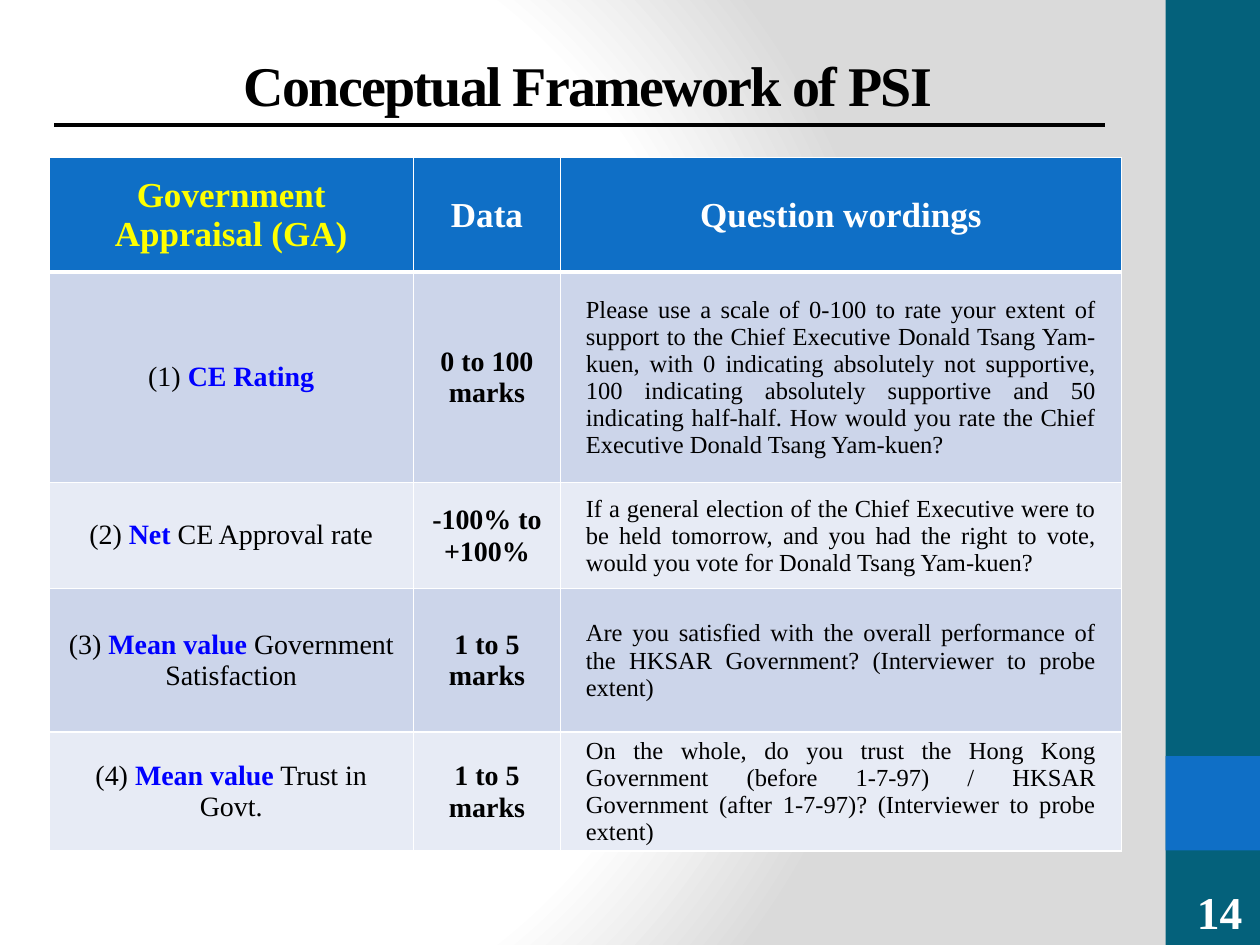
import pptx
import pptx.dml.color
import pptx.enum.shapes
import pptx.enum.text
import pptx.oxml
import pptx.oxml.ns
import pptx.util

Inches, Pt = pptx.util.Inches, pptx.util.Pt
RGBColor = pptx.dml.color.RGBColor
ALIGN, ANCHOR = pptx.enum.text.PP_ALIGN, pptx.enum.text.MSO_ANCHOR
SHAPE = pptx.enum.shapes.MSO_SHAPE
qn = pptx.oxml.ns.qn
NS = pptx.oxml.ns.nsdecls("a")

FONT = "Times New Roman"
BLACK = RGBColor(0, 0, 0)
WHITE = RGBColor(0xFF, 0xFF, 0xFF)
GREY = RGBColor(0xDA, 0xDA, 0xDA)
TEAL = RGBColor(0x04, 0x61, 0x7B)
BLUE = RGBColor(0x0F, 0x6F, 0xC6)
YELLOW = RGBColor(0xFF, 0xFF, 0)
KEY_BLUE = RGBColor(0, 0, 0xFF)
BANDS = [RGBColor(0xCC, 0xD5, 0xEA), RGBColor(0xE7, 0xEB, 0xF5)]

TITLE = "Conceptual Framework of PSI"
PAGE = "14"
HEADERS = [("Government Appraisal (GA)", YELLOW), ("Data", WHITE), ("Question wordings", WHITE)]
# number, key words, rest of the name, data lines, question
ROWS = [
    ("(1) ", "CE Rating", "", ["0 to 100", "marks"],
     "Please use a scale of 0-100 to rate your extent of support to the Chief Executive "
     "Donald Tsang Yam-kuen, with 0 indicating absolutely not supportive, 100 indicating "
     "absolutely supportive and 50 indicating half-half. How would you rate the Chief "
     "Executive Donald Tsang Yam-kuen?"),
    ("(2) ", "Net", " CE Approval rate", ["-100% to", "+100%"],
     "If a general election of the Chief Executive were to be held tomorrow, and you had "
     "the right to vote, would you vote for Donald Tsang Yam-kuen?"),
    ("(3) ", "Mean value", " Government\nSatisfaction", ["1 to 5 marks"],
     "Are you satisfied with the overall performance of the HKSAR Government? "
     "(Interviewer to probe extent)"),
    ("(4) ", "Mean value", " Trust in Govt.", ["1 to 5 marks"],
     "On the whole, do you trust the Hong Kong Government (before 1-7-97) / HKSAR "
     "Government (after 1-7-97)? (Interviewer to probe extent)"),
]
COL_WIDTHS = [2.89, 1.17, 4.45]
ROW_HEIGHTS = [0.91, 1.67, 0.84, 1.14, 0.93]
COL_INSETS = [(0.1, 0.05, 0.1, 0.05), (0.01, 0.01, 0.01, 0), (0.01, 0.01, 0.2, 0)]
HEADER_INSETS = [COL_INSETS[0], COL_INSETS[1], COL_INSETS[1]]


def write(p, runs, size, align=ALIGN.CENTER):
    """Fill a paragraph with (text, colour, bold) runs; a newline is a line break."""
    p.alignment = align
    p.font.name, p.font.size = FONT, Pt(size)
    for text, color, bold in runs:
        for i, line in enumerate(text.split("\n")):
            if i:
                p.add_line_break()
            if line:
                r = p.add_run()
                r.text = line
                r.font.name, r.font.size = FONT, Pt(size)
                r.font.bold, r.font.color.rgb = bold, color


def indent(p, left):
    pPr = p._p.get_or_add_pPr()
    pPr.set("marL", str(Inches(left)))
    pPr.set("indent", "0")


def format_cell(cell, fill, insets, bottom=1):
    cell.fill.solid()
    cell.fill.fore_color.rgb = fill
    cell.vertical_anchor = ANCHOR.MIDDLE
    (cell.margin_left, cell.margin_top,
     cell.margin_right, cell.margin_bottom) = map(Inches, insets)
    tcPr = cell._tc.get_or_add_tcPr()
    for i, (side, width) in enumerate(zip("LRTB", (1, 1, 1, bottom))):
        tcPr.insert(i, pptx.oxml.parse_xml(
            f'<a:ln{side} {NS} w="{Pt(width)}"><a:solidFill>'
            f'<a:srgbClr val="{WHITE}"/></a:solidFill></a:ln{side}>'))


def add_background(slide):
    slide.background.fill.gradient()
    old = next(slide.element.iter(qn("a:gradFill")))
    stops = "".join(f'<a:gs pos="{pos * 1000}"><a:srgbClr val="{color}"/></a:gs>'
                    for pos, color in ((0, WHITE), (75, WHITE), (100, GREY)))
    old.getparent().replace(old, pptx.oxml.parse_xml(
        f'<a:gradFill {NS} rotWithShape="1"><a:gsLst>{stops}</a:gsLst><a:path path="circle">'
        '<a:fillToRect l="20000" t="50000" r="100000" b="50000"/></a:path></a:gradFill>'))


def add_block(slide, top, height, color):
    sp = slide.shapes.add_shape(SHAPE.RECTANGLE, Inches(9.25), Inches(top),
                                Inches(0.75), Inches(height))
    sp.shadow.inherit = False
    sp.fill.solid()
    sp.fill.fore_color.rgb = color
    sp.line.fill.background()


def add_text(slide, box, text, size, color):
    sp = slide.shapes.add_textbox(*map(Inches, box))
    write(sp.text_frame.paragraphs[0], [(text, color, True)], size)
    return sp.text_frame


def add_table(slide):
    table = slide.shapes.add_table(len(ROW_HEIGHTS), len(COL_WIDTHS), Inches(0.39), Inches(1.25),
                                   Inches(sum(COL_WIDTHS)), Inches(sum(ROW_HEIGHTS))).table
    table.horz_banding = False
    for col, width in zip(table.columns, COL_WIDTHS):
        col.width = Inches(width)
    for row, height in zip(table.rows, ROW_HEIGHTS):
        row.height = Inches(height)

    for c, (text, color) in enumerate(HEADERS):
        cell = table.cell(0, c)
        format_cell(cell, BLUE, HEADER_INSETS[c], bottom=3)
        write(cell.text_frame.paragraphs[0], [(text, color, True)], 20)

    for n, (number, key, rest, data, question) in enumerate(ROWS):
        cells = [table.cell(n + 1, c) for c in range(len(COL_WIDTHS))]
        for cell, insets in zip(cells, COL_INSETS):
            format_cell(cell, BANDS[n % 2], insets)
        name_p, data_p, question_p = (cell.text_frame.paragraphs[0] for cell in cells)
        name_p.level = 1
        indent(name_p, 0)
        write(name_p, [(number, BLACK, False), (key, KEY_BLUE, True), (rest, BLACK, False)], 16)
        for i, line in enumerate(data):
            p = cells[1].text_frame.add_paragraph() if i else data_p
            write(p, [(line, BLACK, True)], 16)
        indent(question_p, 0.19)
        write(question_p, [(question, BLACK, False)], 14, ALIGN.JUSTIFY)


def main():
    prs = pptx.Presentation()
    prs.slide_width, prs.slide_height = Inches(10), Inches(7.5)
    slide = prs.slides.add_slide(prs.slide_layouts[6])
    add_background(slide)
    add_block(slide, 0, 7.5, TEAL)
    add_block(slide, 6, 0.75, BLUE)

    tf = add_text(slide, (9.36, 6.97, 0.64, 0.53), PAGE, 26, WHITE)
    tf.vertical_anchor = ANCHOR.BOTTOM

    rule = slide.shapes.add_connector(pptx.enum.shapes.MSO_CONNECTOR.STRAIGHT,
                                      Inches(0.43), Inches(0.99), Inches(8.77), Inches(0.99))
    rule.line.color.rgb, rule.line.width = BLACK, Pt(2.25)
    rule._element.spPr.append(pptx.oxml.parse_xml(f"<a:effectLst {NS}/>"))

    tf = add_text(slide, (0.5, 0.3, 8.33, 0.56), TITLE, 32, BLACK)
    tf.word_wrap = True
    tf.margin_top = Inches(0.1)
    tf.paragraphs[0].runs[0].font._element.set("spc", "-100")

    add_table(slide)
    prs.save("out.pptx")


if __name__ == "__main__":
    main()
